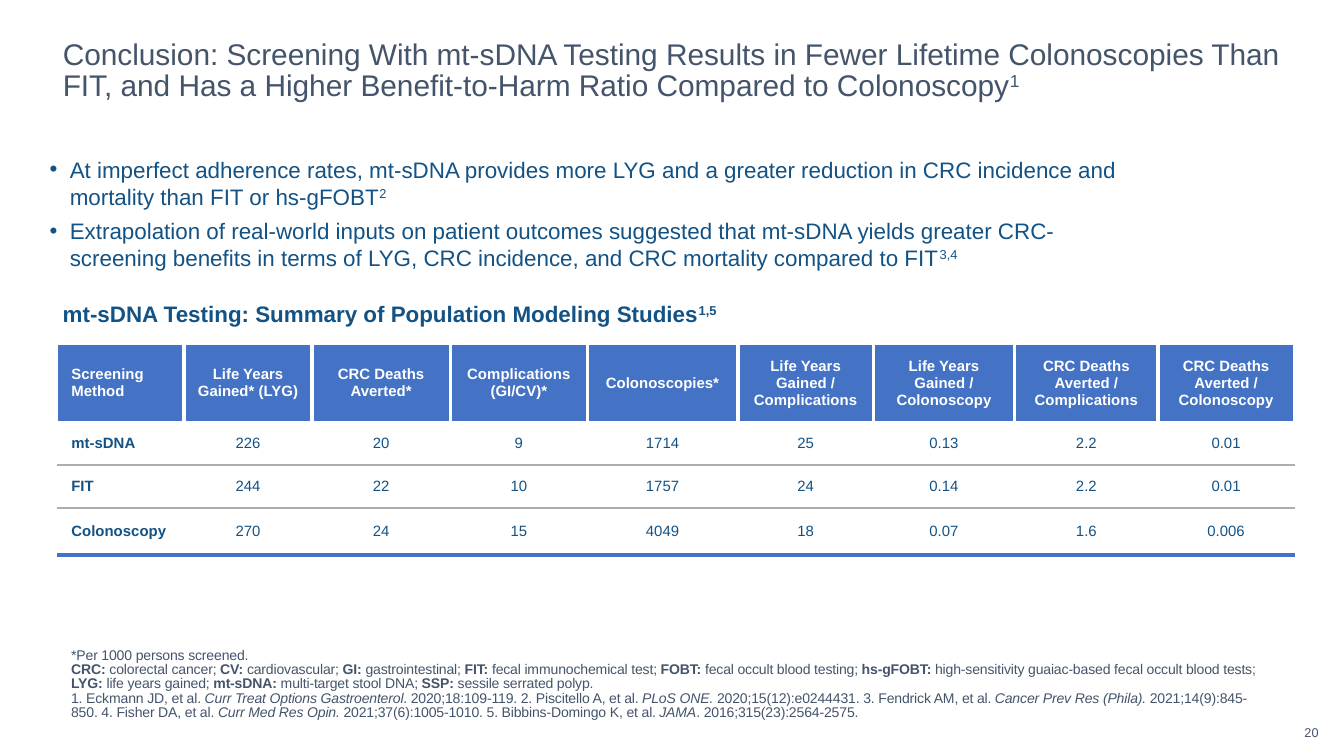
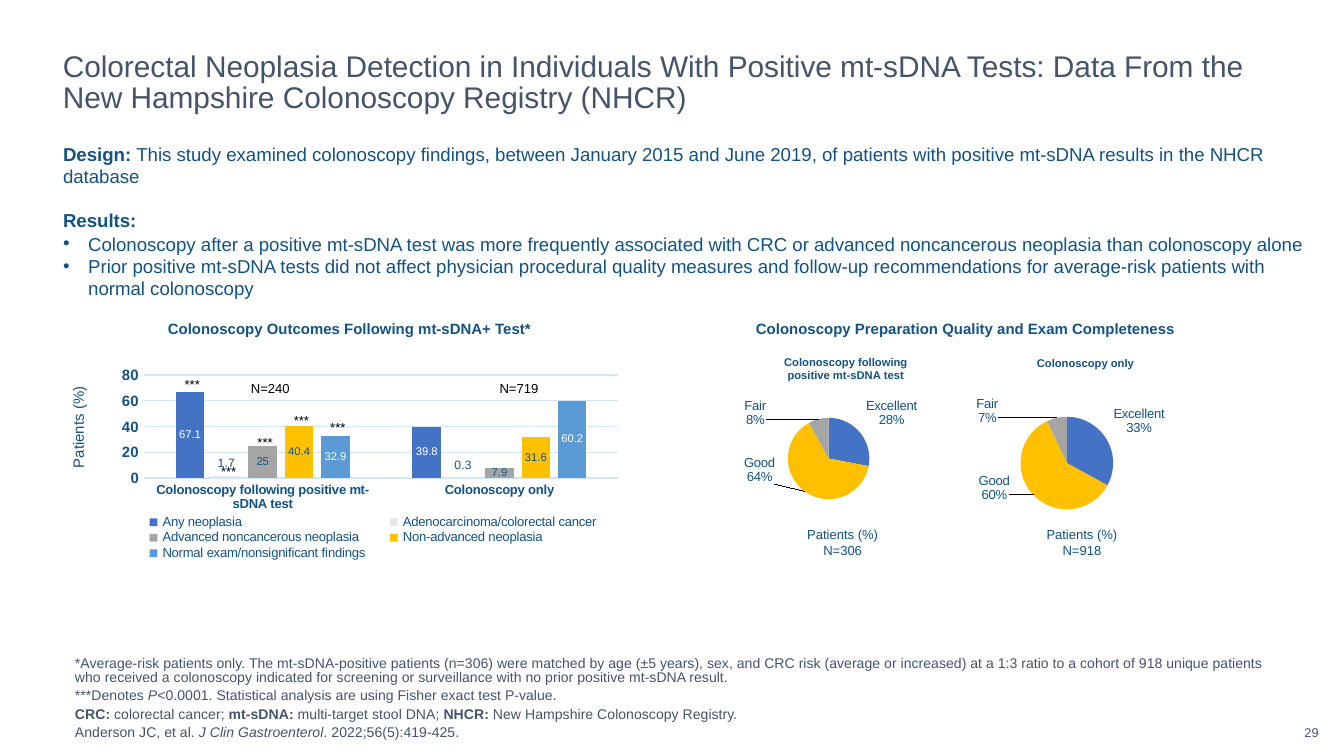
import pptx
import pptx.chart.data
import pptx.dml.color
import pptx.enum.chart
import pptx.enum.text
import pptx.oxml
import pptx.oxml.ns
import pptx.util

Pt = pptx.util.Pt
ALIGN = pptx.enum.text.PP_ALIGN
ANCHOR = pptx.enum.text.MSO_ANCHOR
LABEL_POS = pptx.enum.chart.XL_LABEL_POSITION
CHART = pptx.enum.chart.XL_CHART_TYPE
TICK = pptx.enum.chart.XL_TICK_MARK
NS = pptx.oxml.ns.nsdecls("a", "c")

FONT = "Arial"
NAVY, SLATE, BLUE, GOLD = "125285", "44546A", "4472C4", "FFC000"
GREY, RULE, PALE, SKY = "A5A5A5", "AEAEAE", "D0E6F9", "5B9BD5"
WHITE, BLACK, LIGHT = "FFFFFF", "000000", "E7E6E6"


def rgb(value):
    return pptx.dml.color.RGBColor.from_string(value)


def set_font(font, size, color=NAVY, bold=False):
    font.name, font.size, font.bold = FONT, Pt(size), bold
    font.color.rgb = rgb(color)


def write(tf, paragraphs, size=8, color=NAVY, bold=False, align=ALIGN.LEFT,
          line=None, before=0, bullet=0, spacing=0):
    """A paragraph is a string or a list of runs; a run is a string or
    (string, style) with style b, i or s (superscript)."""
    for i, runs in enumerate(paragraphs):
        p = tf.paragraphs[0] if i == 0 else tf.add_paragraph()
        p.alignment = align
        p.space_before = Pt(before if i else 0)
        if line:
            p.line_spacing = line
        if bullet:
            add_bullet(p, bullet)
        for run in [runs] if isinstance(runs, str) else runs:
            text, style = (run, "") if isinstance(run, str) else run
            r = p.add_run()
            r.text = text
            set_font(r.font, size, color, bold or "b" in style)
            r.font.italic = "i" in style
            rPr = r.font._element
            if "s" in style:
                rPr.set("baseline", "30000")
            if spacing:
                rPr.set("spc", str(round(spacing * 100)))


def add_bullet(p, indent):
    pPr = p._p.get_or_add_pPr()
    pPr.set("marL", str(Pt(indent)))
    pPr.set("indent", str(-Pt(indent)))
    for xml in (f'<a:buClr {NS}><a:srgbClr val="{NAVY}"/></a:buClr>',
                f'<a:buFont {NS} typeface="{FONT}"/>',
                f'<a:buChar {NS} char="•"/>'):
        pPr.append(pptx.oxml.parse_xml(xml))


def set_layout(parent, index, x, y, w=None, h=None, edge=True, inner=False):
    """Place a chart part by fractions of the chart area."""
    for old in parent.xpath("./c:layout"):
        parent.remove(old)
    xml = '<c:layoutTarget val="inner"/>' if inner else ""
    if edge:
        xml += '<c:xMode val="edge"/><c:yMode val="edge"/>'
    for tag, value in zip("xywh", (x, y, w, h)):
        if value is not None:
            xml += f'<c:{tag} val="{value}"/>'
    parent.insert(index, pptx.oxml.parse_xml(
        f"<c:layout {NS}><c:manualLayout>{xml}</c:manualLayout></c:layout>"))


def set_borders(cell, left, right, top, bottom):
    tcPr = cell._tc.get_or_add_tcPr()
    for i, (side, (color, width)) in enumerate(zip("LRTB", (left, right, top, bottom))):
        tcPr.insert(i, pptx.oxml.parse_xml(
            f'<a:ln{side} {NS} w="{Pt(width)}"><a:solidFill>'
            f'<a:srgbClr val="{color}"/></a:solidFill></a:ln{side}>'))


def glossary(**terms):
    """Runs for a list of abbreviations, each term in bold."""
    runs = []
    for i, (term, meaning) in enumerate(terms.items()):
        end = "." if i == len(terms) - 1 else "; "
        runs += [(term.replace("_", "-") + ":", "b"), f" {meaning}{end}"]
    return runs


class Deck:
    def __init__(self):
        self.prs = pptx.Presentation()
        self.prs.slide_width, self.prs.slide_height = Pt(720), Pt(405)
        self.s = None

    def slide(self, number, title, title_top):
        self.s = self.prs.slides.add_slide(self.prs.slide_layouts[6])
        self.text([str(number)], 680.4, 389.5, 26, 7.2, size=6.8, color=SLATE,
                  align=ALIGN.RIGHT, line=0.9, anchor=ANCHOR.BOTTOM, inset=(0, 0))
        self.text([title], 26.6, title_top, 666.7, 23.8, size=16, color=SLATE, line=0.85)

    def text(self, paragraphs, x, y, w, h, anchor=ANCHOR.TOP, inset=(7.2, 3.6),
             rotation=0, **style):
        sp = self.s.shapes.add_textbox(Pt(x), Pt(y), Pt(w), Pt(h))
        sp.rotation = rotation
        tf = sp.text_frame
        tf.word_wrap = True
        tf.vertical_anchor = anchor
        tf.margin_left = tf.margin_right = Pt(inset[0])
        tf.margin_top = tf.margin_bottom = Pt(inset[1])
        write(tf, paragraphs, **style)

    def footnote(self, paragraphs, x, y, w, **style):
        self.text(paragraphs, x, y, w, 25.2, anchor=ANCHOR.BOTTOM, inset=(7.2, 0),
                  size=7.5, color=SLATE, line=0.85, **style)

    def table(self, rows, x, y, widths, heights):
        tbl = self.s.shapes.add_table(len(rows), len(widths), Pt(x), Pt(y),
                                      Pt(sum(widths)), Pt(sum(heights))).table
        tbl.horz_banding = False
        for col, width in zip(tbl.columns, widths):
            col.width = Pt(width)
        for row, height in zip(tbl.rows, heights):
            row.height = Pt(height)
        thin, thick, rule = (WHITE, 0.75), (WHITE, 2.25), (RULE, 1)
        last_row, last_col = len(rows) - 1, len(widths) - 1
        for i, row in enumerate(rows):
            for j, value in enumerate(row):
                cell, head = tbl.cell(i, j), i == 0
                cell.vertical_anchor = ANCHOR.MIDDLE
                write(cell.text_frame, value.split("\n"), color=WHITE if head else NAVY,
                      bold=head or j == 0, align=ALIGN.CENTER if j else ALIGN.LEFT)
                if head:
                    cell.fill.solid()
                    cell.fill.fore_color.rgb = rgb(BLUE)
                else:
                    cell.fill.background()
                set_borders(cell,
                            left=thick if head and j else thin,
                            right=thick if head and j < last_col else thin,
                            top=rule if i > 1 else thin,
                            bottom=thin if head else (BLUE, 2.25) if i == last_row else rule)

    def chart(self, kind, categories, series, x, y, w, h, plot):
        data = pptx.chart.data.CategoryChartData()
        data.categories = categories
        for name, values in series:
            data.add_series(name, values)
        chart = self.s.shapes.add_chart(kind, Pt(x), Pt(y), Pt(w), Pt(h), data).chart
        set_font(chart.font, 8)
        chart.has_title = chart.has_legend = False
        set_layout(chart._chartSpace.xpath("c:chart/c:plotArea")[0], 0, *plot, inner=True)
        return chart

    def pie(self, name, title, values, box, plot, title_at, offsets):
        chart = self.chart(CHART.PIE, ["Excellent", "Good", "Fair"], [(name, values)],
                           *box, plot)
        chart.has_title = True
        write(chart.chart_title.text_frame, title, size=6, bold=True, align=ALIGN.CENTER)
        set_layout(chart.chart_title._element, 1, *title_at)
        series = chart.plots[0].series[0]
        set_font(series.data_labels.font, 7)
        for i, color in enumerate((BLUE, GOLD, GREY)):
            point = series.points[i]
            point.format.fill.solid()
            point.format.fill.fore_color.rgb = rgb(color)
            set_font(point.data_label.font, 7)
            point.data_label.position = LABEL_POS.OUTSIDE_END
        # Category and percentage on two lines, moved off the default place
        labels = series._element.xpath("c:dLbls")[0]
        points = labels.xpath("c:dLbl")
        for label in [labels, *points]:
            for tag, on in (("Val", 0), ("CatName", 1), ("Percent", 1)):
                for flag in label.xpath(f"c:show{tag}"):
                    flag.set("val", str(on))
            label.xpath("c:showBubbleSize|c:showPercent")[-1].addnext(
                pptx.oxml.parse_xml(f"<c:separator {NS}>\n</c:separator>"))
        for label, offset in zip(points, offsets):
            if offset:
                set_layout(label, 1, *offset, edge=False)

    def columns(self, categories, series, box, plot, legend_at):
        chart = self.chart(CHART.COLUMN_CLUSTERED, categories,
                           [item[:2] for item in series], *box, plot)
        bars = chart.plots[0]
        bars.gap_width, bars.overlap, bars.vary_by_categories = 219, -27, False
        for ser, (_, _, color, label_color, size, position) in zip(bars.series, series):
            ser.format.fill.solid()
            ser.format.fill.fore_color.rgb = rgb(color)
            labels = ser.data_labels
            labels.show_value, labels.position = True, position
            set_font(labels.font, size, label_color)
        cat, val = chart.category_axis, chart.value_axis
        for axis, size in ((cat, 7), (val, 8)):
            axis.major_tick_mark = axis.minor_tick_mark = TICK.NONE
            set_font(axis.tick_labels.font, size, bold=True)
        val.minimum_scale, val.maximum_scale, val.major_unit = 0, 80, 20
        val.format.line.fill.background()
        for line in (cat.format.line, val.major_gridlines.format.line):
            line.color.rgb, line.width = rgb(PALE), Pt(0.75)
        chart.has_legend = True
        chart.legend.position = pptx.enum.chart.XL_LEGEND_POSITION.BOTTOM
        chart.legend.include_in_layout = False
        set_font(chart.legend.font, 7)
        set_layout(chart.legend._element, 1, *legend_at)


def conclusion(deck):
    deck.slide(20, ["Conclusion: Screening With mt-sDNA Testing Results in Fewer Lifetime Colonoscopies Than FIT, and Has a Higher Benefit-to-Harm Ratio Compared to Colonoscopy", ("1", "s")], 18.7)
    deck.text([
        ["At imperfect adherence rates, mt-sDNA provides more LYG and a greater reduction in CRC incidence and mortality than FIT or hs‑gFOBT", ("2", "s")],
        ["Extrapolation of real-world inputs on patient outcomes suggested that mt-sDNA yields greater CRC-screening benefits in terms of LYG, CRC incidence, and CRC mortality compared to FIT", ("3,4", "s")],
    ], 26.6, 83.5, 589, 60.5, inset=(0, 0), size=12, before=4, bullet=10.8)
    deck.text([["mt-sDNA Testing: Summary of Population Modeling Studies", ("1,5", "s")]],
              26.5, 157, 384, 21.6, size=12, bold=True)
    deck.table([
        ["Screening Method", "Life Years Gained* (LYG)", "CRC Deaths Averted*",
         "Complications (GI/CV)*", "Colonoscopies*", "Life Years Gained /\nComplications",
         "Life Years Gained / Colonoscopy", "CRC Deaths Averted /\nComplications",
         "CRC Deaths Averted /\nColonoscopy"],
        ["mt-sDNA", "226", "20", "9", "1714", "25", "0.13", "2.2", "0.01"],
        ["FIT", "244", "22", "10", "1757", "24", "0.14", "2.2", "0.01"],
        ["Colonoscopy", "270", "24", "15", "4049", "18", "0.07", "1.6", "0.006"],
    ], 31, 184.3, [67.7, 68.4, 74.2, 73.4, 80.6, 72.7, 75.6, 77, 72.7], [41.8, 23, 23, 25.2])
    deck.footnote([
        "*Per 1000 persons screened.",
        glossary(CRC="colorectal cancer", CV="cardiovascular", GI="gastrointestinal",
                 FIT="fecal immunochemical test", FOBT="fecal occult blood testing",
                 hs_gFOBT="high-sensitivity guaiac-based fecal occult blood tests",
                 LYG="life years gained", mt_sDNA="multi-target stool DNA",
                 SSP="sessile serrated polyp"),
        ["1. Eckmann JD, et al. ", ("Curr Treat Options Gastroenterol", "i"),
         ". 2020;18:109-119. 2. Piscitello A, et al. ", ("PLoS ONE. ", "i"),
         "2020;15(12):e0244431. 3. Fendrick AM, et al. ", ("Cancer Prev Res (Phila). ", "i"),
         "2021;14(9):845-850. 4. Fisher DA, et al. ", ("Curr Med Res Opin. ", "i"),
         "2021;37(6):1005-1010. 5. Bibbins-Domingo K, et al. ", ("JAMA", "i"),
         ". 2016;315(23):2564-2575."],
    ], 31, 360.7, 653.8, spacing=-0.1)


def registry(deck):
    deck.slide(29, "Colorectal Neoplasia Detection in Individuals With Positive mt-sDNA Tests: Data From the New Hampshire Colonoscopy Registry (NHCR)", 25.2)
    # Design and results
    body = dict(x=33.8, w=666.7, inset=(0, 0), size=10)
    deck.text([
        [("Design: ", "b"), "This study examined colonoscopy findings, between January 2015 and June 2019, of patients with positive mt-sDNA results in the NHCR database"],
        [("Results:", "b")],
    ], y=76.3, h=48, before=11.8, **body)
    deck.text([
        "Colonoscopy after a positive mt-sDNA test was more frequently associated with CRC or advanced noncancerous neoplasia than colonoscopy alone",
        "Prior positive mt-sDNA tests did not affect physician procedural quality measures and follow-up recommendations for average-risk patients with normal colonoscopy",
    ], y=124.5, h=36, bullet=13.5, **body)
    deck.footnote([
        "*Average-risk patients only. The mt-sDNA-positive patients (n=306) were matched by age (±5 years), sex, and CRC risk (average or increased) at a 1:3 ratio to a cohort of 918 unique patients who received a colonoscopy indicated for screening or surveillance with no prior positive mt-sDNA result.",
        ["***Denotes ", ("P", "i"), "<0.0001. Statistical analysis are using Fisher exact test P-value."],
        glossary(CRC="colorectal cancer", mt_sDNA="multi-target stool DNA",
                 NHCR="New Hampshire Colonoscopy Registry"),
        ["Anderson JC, et al. ", ("J Clin Gastroenterol", "i"), ". 2022;56(5):419-425."],
    ], 33.1, 371.5, 655.2, before=2.2)

    # Preparation quality pies
    deck.text(["Colonoscopy Preparation Quality and Exam Completeness"],
              396.7, 167.8, 241.2, 17.3, bold=True, align=ALIGN.CENTER)
    deck.pie("Series 1", ["Colonoscopy following", "positive mt-sDNA test"], [28, 64, 8],
             (354.2, 167.8, 193, 124.6), (0.35, 0.45, 0.23, 0.35), (0.33, 0.16),
             (None, (-0.07, -0.18), (-0.14, 0.07)))
    deck.pie("Colonoscopy only", ["Colonoscopy only"], [33, 60, 7],
             (483.8, 177.1, 190.8, 117.4), (0.33, 0.39, 0.26, 0.43), (0.37, 0.11),
             (None, (-0.05, -0.12), (-0.16, 0.07)))
    for x, count in ((421.9, "N=306"), (550.1, "N=918")):
        deck.text(["Patients (%)", count], x, 278.6, 59, 24.5, size=7, align=ALIGN.CENTER)

    # Outcomes columns
    deck.text(["Patients (%)"], 0, 220.3, 84.2, 17.3, rotation=270, align=ALIGN.CENTER)
    deck.text(["Colonoscopy Outcomes Following mt-sDNA+ Test*"],
              82.8, 167.8, 219.6, 17.3, bold=True)
    mid, end = LABEL_POS.CENTER, LABEL_POS.OUTSIDE_END
    deck.columns(["Colonoscopy following positive mt-sDNA test", "Colonoscopy only"], [
        ("Any neoplasia", (67.1, 39.8), BLUE, WHITE, 6, mid),
        ("Adenocarcinoma/colorectal cancer", (1.7, 0.3), LIGHT, NAVY, 6.5, end),
        ("Advanced noncancerous neoplasia", (25, 7.9), GREY, NAVY, 6, mid),
        ("Non-advanced neoplasia", (40.4, 31.6), GOLD, NAVY, 6, mid),
        ("Normal exam/nonsignificant findings", (32.9, 60.2), SKY, WHITE, 6, mid),
    ], (51.1, 184.3, 291.6, 128.2), (0.09, 0.13, 0.87, 0.43), (0.06, 0.71, 0.9, 0.2))
    # Significance marks and group sizes
    for i, y in enumerate((198, 244.8, 229, 217.4, 221)):
        deck.text(["***"], 87.5 + 19.5 * i, y, 31, 15.8, size=7, color=BLACK,
                  align=ALIGN.CENTER)
    for x, count in ((127.4, "N=240"), (260.6, "N=719")):
        deck.text([count], x, 200.2, 43.2, 15.8, size=7, color=BLACK)


def main():
    deck = Deck()
    conclusion(deck)
    registry(deck)
    deck.prs.save("out.pptx")


if __name__ == "__main__":
    main()
